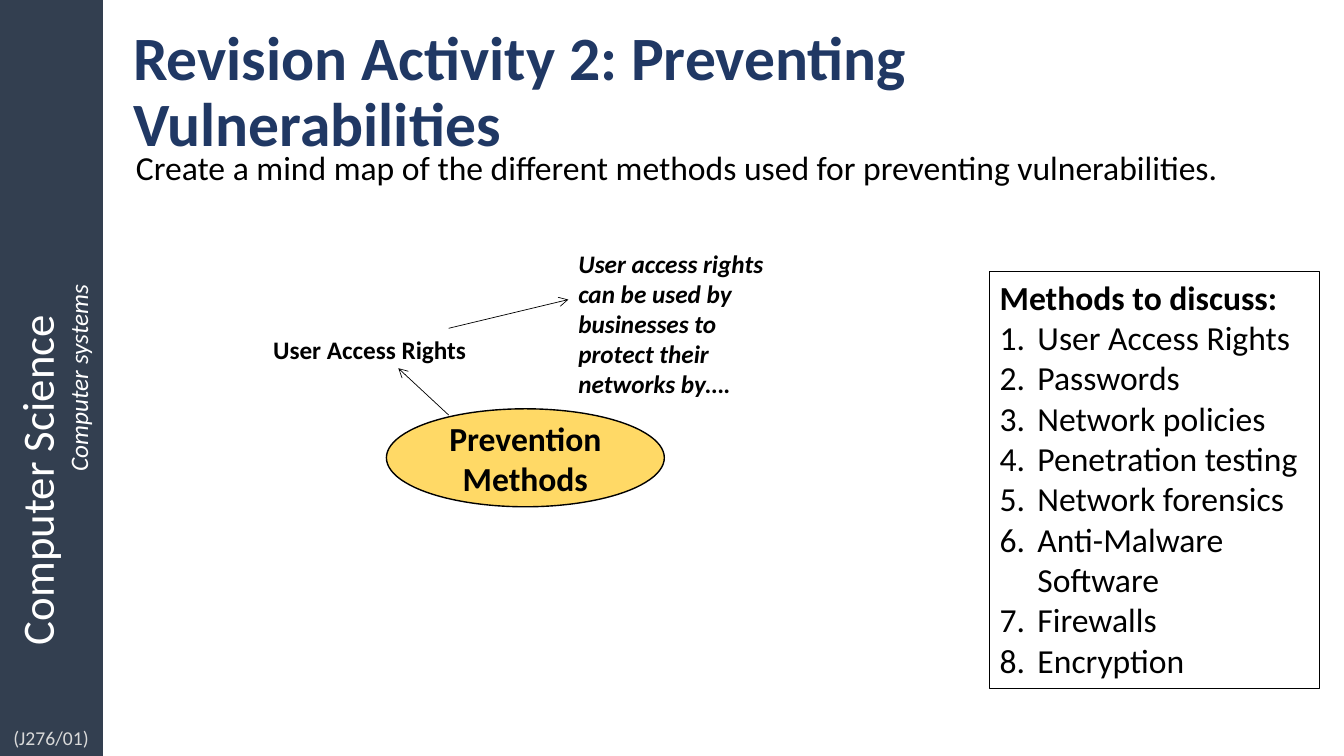
from lxml.etree import SubElement
from pptx import Presentation
from pptx.dml.color import RGBColor
from pptx.enum.shapes import MSO_CONNECTOR, MSO_SHAPE
from pptx.enum.text import MSO_ANCHOR, PP_ALIGN
from pptx.oxml.ns import qn
from pptx.util import Pt

WHITE = RGBColor(0xFF, 0xFF, 0xFF)
BLACK = RGBColor(0x00, 0x00, 0x00)
SLATE = RGBColor(0x33, 0x3F, 0x50)
NAVY = RGBColor(0x20, 0x38, 0x64)
SILVER = RGBColor(0xD9, 0xD9, 0xD9)
GOLD = RGBColor(0xFF, 0xD9, 0x66)

METHODS = [
    "User Access Rights",
    "Passwords",
    "Network policies",
    "Penetration testing",
    "Network forensics",
    "Anti-Malware Software",
    "Firewalls",
    "Encryption",
]


def write(frame, text, size=18, color=BLACK, bold=False, italic=False,
          align=PP_ALIGN.LEFT, spacing=None, before=0, margin=0, numbered=False):
    paragraph = frame.add_paragraph() if frame.text else frame.paragraphs[0]
    paragraph.alignment = align
    paragraph.line_spacing = spacing
    paragraph.space_before = Pt(before)
    properties = paragraph._p.get_or_add_pPr()
    properties.set("marL", str(Pt(margin)))
    if numbered:
        properties.set("indent", str(-Pt(margin)))
        SubElement(properties, qn("a:buFont"), typeface="+mj-lt")
        SubElement(properties, qn("a:buAutoNum"), type="arabicPeriod")
    run = paragraph.add_run()
    run.text = text
    run.font.name = "Calibri"
    run.font.size = Pt(size)
    run.font.color.rgb = color
    run.font.bold = bold
    run.font.italic = italic


class RevisionSlide:
    def __init__(self, slide):
        self.shapes = slide.shapes
        self.outline = BLACK

    def text(self, box, text, anchor=MSO_ANCHOR.TOP, **style):
        frame = self.shapes.add_textbox(*map(Pt, box)).text_frame
        frame.word_wrap = True
        frame.vertical_anchor = anchor
        write(frame, text, **style)

    def panel(self, kind, box, fill=None, outline=None, weight=1, anchor=MSO_ANCHOR.MIDDLE):
        panel = self.shapes.add_shape(kind, *map(Pt, box))
        panel.shadow.inherit = False
        if fill is None:
            panel.fill.background()
        else:
            panel.fill.solid()
            panel.fill.fore_color.rgb = fill
        panel.line.color.rgb = outline or self.outline
        panel.line.width = Pt(weight)
        frame = panel.text_frame
        frame.word_wrap = True
        frame.vertical_anchor = anchor
        return frame

    def arrow(self, start, end):
        arrow = self.shapes.add_connector(MSO_CONNECTOR.STRAIGHT, *map(Pt, start + end))
        arrow.line.color.rgb = self.outline
        arrow.line.width = Pt(0.5)
        properties = arrow.element.spPr
        SubElement(properties.find(qn("a:ln")), qn("a:tailEnd"), type="arrow")
        SubElement(properties, qn("a:effectLst"))


def main():
    deck = Presentation()
    deck.slide_width, deck.slide_height = Pt(960), Pt(540)
    page = RevisionSlide(deck.slides.add_slide(deck.slide_layouts[6]))

    sidebar = page.panel(MSO_SHAPE.RECTANGLE, (0, 0, 73, 540), SLATE, SLATE)
    sidebar._txBody.bodyPr.set("vert", "vert270")
    write(sidebar, "Computer Science", size=32, color=WHITE, margin=72)
    write(sidebar, "Computer systems", color=WHITE, italic=True, align=PP_ALIGN.CENTER)
    page.text((0, 515, 73, 24.5), "(J276/01)", size=14, color=SILVER, align=PP_ALIGN.CENTER)

    page.text((88, 14.5, 806, 104.5), "Revision Activity 2: Preventing Vulnerabilities",
              anchor=MSO_ANCHOR.MIDDLE, size=44, color=NAVY, bold=True, spacing=0.9)
    page.text((90, 104.5, 806, 36),
              "Create a mind map of the different methods used for preventing vulnerabilities.",
              size=24, spacing=0.9, before=10)

    discussion = page.panel(MSO_SHAPE.RECTANGLE, (707, 194, 235.5, 298),
                            weight=0.75, anchor=MSO_ANCHOR.TOP)
    write(discussion, "Methods to discuss:", size=24, bold=True)
    for method in METHODS:
        write(discussion, method, size=24, margin=27, numbered=True)

    hub = page.panel(MSO_SHAPE.OVAL, (276, 292, 198.5, 70), GOLD)
    write(hub, "Prevention Methods", size=24, bold=True, align=PP_ALIGN.CENTER)
    page.arrow((320.5, 296.5), (284.5, 263))
    page.text((188, 235, 178, 29), "User Access Rights", bold=True)
    page.arrow((320.5, 234.5), (406, 214))
    page.text((406, 173.5, 165, 116.5),
              "User access rights can be used by businesses to protect their networks by….",
              bold=True, italic=True)

    deck.save("out.pptx")


if __name__ == "__main__":
    main()
